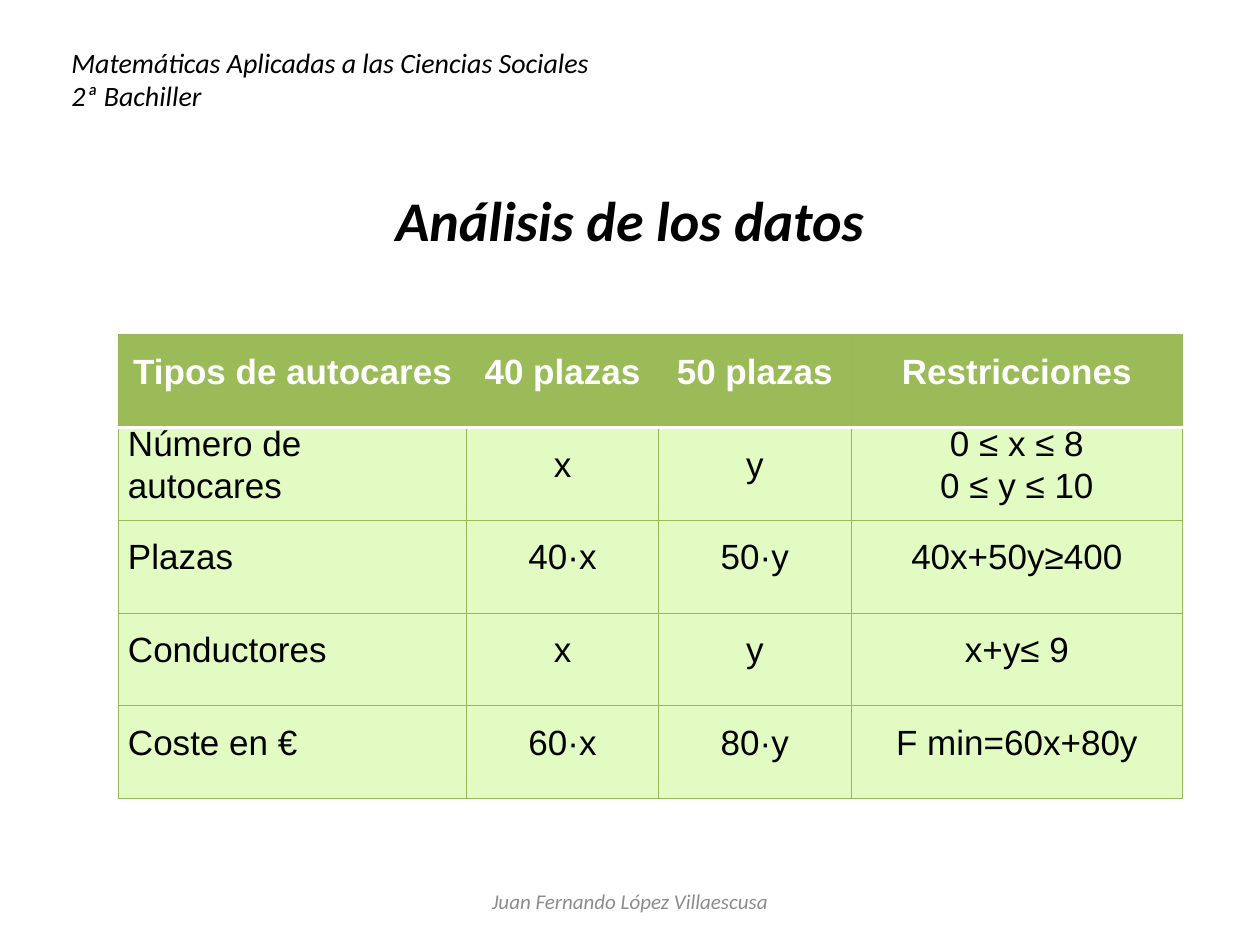
from lxml.etree import SubElement
from pptx import Presentation
from pptx.dml.color import RGBColor
from pptx.enum.text import MSO_ANCHOR as Anchor, PP_ALIGN as Align
from pptx.oxml.ns import qn
from pptx.util import Cm, Pt

BLACK = RGBColor(0x00, 0x00, 0x00)
WHITE = RGBColor(0xFF, 0xFF, 0xFF)
GRAY = RGBColor(0x8C, 0x8C, 0x8C)
HEADER_GREEN = RGBColor(0x9B, 0xBB, 0x59)
BORDER_GREEN = RGBColor(0x98, 0xB9, 0x55)
PALE_GREEN = RGBColor(0xE2, 0xFB, 0xC2)

COLUMN_WIDTHS = [7.02, 3.86, 3.89, 6.68]
ROW_HEIGHT = 1.87
ROWS = [
    ["Tipos de autocares", "40 plazas", "50 plazas", "Restricciones"],
    ["Número de\nautocares", "x", "y", "0 ≤ x ≤ 8\n0 ≤ y ≤ 10"],
    ["Plazas", "40·x", "50·y", "40x+50y≥400"],
    ["Conductores", "x", "y", "x+y≤ 9"],
    ["Coste en €", "60·x", "80·y", "F min=60x+80y"],
]


def add_run(paragraph, text, name, size, color, bold=False, italic=False):
    run = paragraph.add_run()
    run.text = text
    font = run.font
    font.name = name
    font.size = Pt(size)
    font.bold = bold
    font.italic = italic
    font.color.rgb = color


def add_label(slide, box, lines, size, color=BLACK, bold=False,
              align=Align.LEFT, anchor=Anchor.TOP, wrap=False):
    shape = slide.shapes.add_textbox(*(Cm(length) for length in box))
    frame = shape.text_frame
    frame.word_wrap = wrap
    frame.vertical_anchor = anchor
    paragraph = frame.paragraphs[0]
    paragraph.alignment = align
    for index, line in enumerate(lines):
        if index:
            paragraph.add_line_break()
        add_run(paragraph, line, "Calibri", size, color, bold, italic=True)


def set_border(cell, side, color, width):
    properties = cell._tc.get_or_add_tcPr()
    line = SubElement(properties, qn(f"a:ln{side}"), w=str(Pt(width)))
    fill = SubElement(line, qn("a:solidFill"))
    SubElement(fill, qn("a:srgbClr"), val=str(color))


def fill_cell(cell, text, row, column):
    is_header = row == 0
    white_sides = {0: "B", 1: "T"}
    for side in "LRTB":
        if white_sides.get(row) == side:
            set_border(cell, side, WHITE, 2)
        else:
            set_border(cell, side, BORDER_GREEN, 0.75)
    cell.fill.solid()
    cell.fill.fore_color.rgb = HEADER_GREEN if is_header else PALE_GREEN
    cell.vertical_anchor = Anchor.MIDDLE
    cell.margin_left = cell.margin_right = Cm(0.19)
    cell.margin_top = cell.margin_bottom = 0

    frame = cell.text_frame
    for index, line in enumerate(text.split("\n")):
        paragraph = frame.add_paragraph() if index else frame.paragraphs[0]
        paragraph.alignment = Align.CENTER if is_header or column else Align.LEFT
        paragraph.line_spacing = Pt(12)
        if row == 1:
            paragraph.space_before = Pt(12 * index)
        else:
            paragraph.space_before = Pt(4.5)
            paragraph.space_after = Pt(7)
        add_run(paragraph, line, "Arial", 20,
                WHITE if is_header else BLACK, bold=is_header)


def add_data_table(slide):
    table = slide.shapes.add_table(
        len(ROWS), len(COLUMN_WIDTHS), Cm(2.39), Cm(6.75),
        Cm(sum(COLUMN_WIDTHS)), Cm(ROW_HEIGHT * len(ROWS))).table
    for column, width in zip(table.columns, COLUMN_WIDTHS):
        column.width = Cm(width)
    for row, texts in enumerate(ROWS):
        table.rows[row].height = Cm(ROW_HEIGHT)
        for column, text in enumerate(texts):
            fill_cell(table.cell(row, column), text, row, column)


def main():
    presentation = Presentation()
    presentation.slide_width = Cm(25.4)
    presentation.slide_height = Cm(19.05)
    slide = presentation.slides.add_slide(presentation.slide_layouts[6])

    add_data_table(slide)
    add_label(slide, (7.2, 3.61, 11, 2.39), ["Análisis de los datos"], 32,
              bold=True, align=Align.CENTER)
    add_label(slide, (8.68, 17.65, 8.04, 1.02),
              ["Juan Fernando López Villaescusa"], 12, GRAY,
              align=Align.CENTER, anchor=Anchor.MIDDLE, wrap=True)
    add_label(slide, (1.19, 0.79, 11.07, 1.63),
              ["Matemáticas Aplicadas a las Ciencias Sociales", "2ª Bachiller"], 16)
    presentation.save("out.pptx")


if __name__ == "__main__":
    main()
